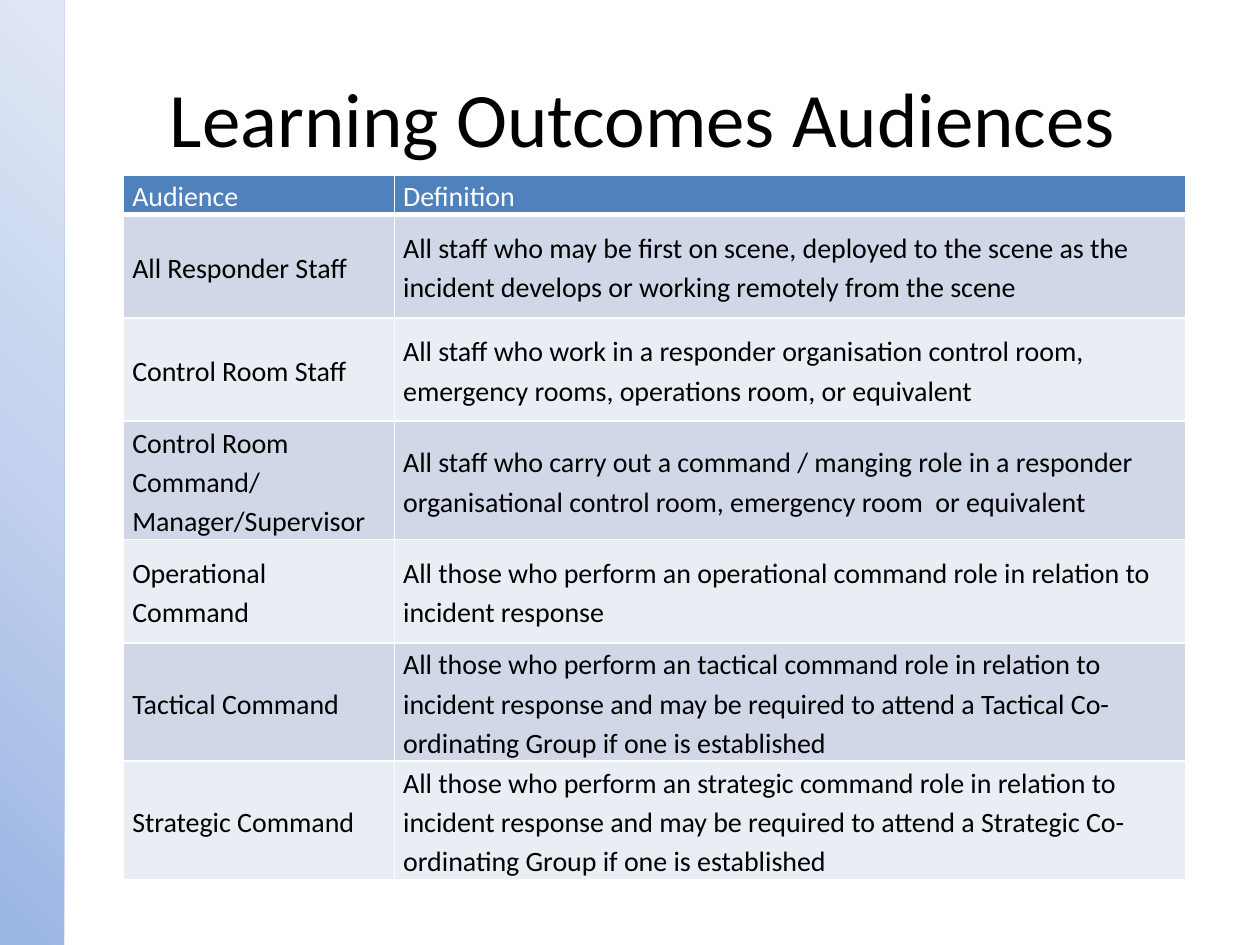
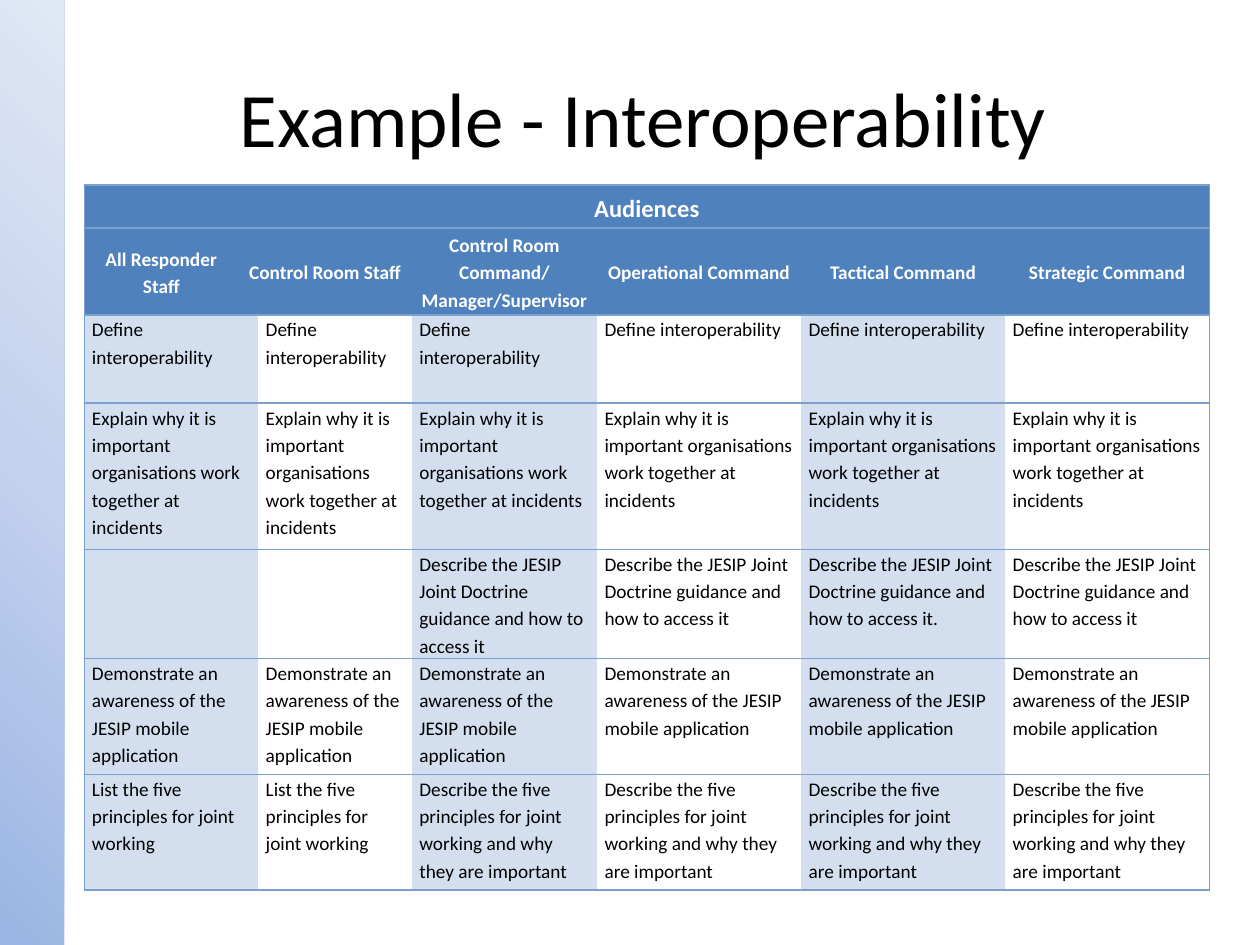
"""Build two slides on learning outcomes and their audiences."""
import copy

import pptx
import pptx.dml.color
import pptx.enum.shapes
import pptx.enum.text
import pptx.oxml.ns
import pptx.util
from lxml import etree
from pptx.util import Inches

FONT = "Calibri"
BLACK, WHITE = "000000", "FFFFFF"
HEADER_BLUE, GRID_BLUE, COLUMN_BLUE = "4F81BD", "7BA0CD", "D3DFEE"
ROW_BANDS = ("D0D8E8", "E9EDF4")
SIDE_BAND_STOPS = ((0, "9AB5E4"), (0.5, "C2D1ED"), (1, "E1E8F5"))
PLAIN_TABLE_STYLE = "{2D5ABB26-0587-4C30-8999-92F81FD0307C}"
LEFT = pptx.enum.text.PP_ALIGN.LEFT
CENTER = pptx.enum.text.PP_ALIGN.CENTER
TOP = pptx.enum.text.MSO_ANCHOR.TOP
MIDDLE = pptx.enum.text.MSO_ANCHOR.MIDDLE

AUDIENCES = (
    ("Audience", "Definition"),
    ("All Responder Staff",
     "All staff who may be first on scene, deployed to the scene as the incident "
     "develops or working remotely from the scene"),
    ("Control Room Staff",
     "All staff who work in a responder organisation control room, emergency rooms, "
     "operations room, or equivalent"),
    ("Control Room Command/ Manager/Supervisor",
     "All staff who carry out a command / manging role in a responder organisational "
     "control room, emergency room  or equivalent"),
    ("Operational Command",
     "All those who perform an operational command role in relation to incident response"),
    ("Tactical Command",
     "All those who perform an tactical command role in relation to incident response and "
     "may be required to attend a Tactical Co-ordinating Group if one is established"),
    ("Strategic Command",
     "All those who perform an strategic command role in relation to incident response and "
     "may be required to attend a Strategic Co-ordinating Group if one is established"),
)

AUDIENCE_HEADINGS = (
    "All Responder Staff", "Control Room Staff",
    "Control Room Command/\nManager/Supervisor",
    "Operational Command", "Tactical Command", "Strategic Command",
)
DOCTRINE = "Describe the JESIP Joint Doctrine guidance and how to access it"
OUTCOMES = (
    ["Define interoperability"] * 6,
    ["Explain why it is important organisations work together at incidents"] * 6,
    ["", "", DOCTRINE, DOCTRINE, DOCTRINE + ".", DOCTRINE],
    ["Demonstrate an awareness of the JESIP mobile application"] * 6,
    ["List the five principles for joint working"] * 2
    + ["Describe the five principles for joint working and why they are important"] * 4,
)


def rgb(value):
    """Return the colour for a hex string."""
    return pptx.dml.color.RGBColor.from_string(value)


def format_paragraph(paragraph, size, color, bold=False, alignment=LEFT):
    """Set the font and alignment of a paragraph."""
    paragraph.alignment = alignment
    font = paragraph.font
    font.name, font.size, font.bold = FONT, pptx.util.Pt(size), bold
    font.color.rgb = rgb(color)


def add_side_band(slide):
    """Add the gradient band behind everything at the left edge."""
    band = slide.shapes.add_shape(
        pptx.enum.shapes.MSO_SHAPE.RECTANGLE, 0, 0, Inches(0.51), Inches(7.5))
    band.shadow.inherit = False
    band.line.fill.background()
    band.fill.gradient()
    band.fill.gradient_angle = 45
    stop_list = band._element.spPr.find(".//" + pptx.oxml.ns.qn("a:gsLst"))
    stop_list.append(copy.deepcopy(stop_list[0]))
    for stop, (position, color) in zip(band.fill.gradient_stops, SIDE_BAND_STOPS):
        stop.position = position
        stop.color.rgb = rgb(color)
    slide.shapes._spTree.insert(2, band._element)


def add_titled_slide(presentation, text):
    """Add a slide with the side band and a centred title."""
    slide = presentation.slides.add_slide(presentation.slide_layouts[5])
    add_side_band(slide)
    title = slide.shapes.title
    title.left, title.top = Inches(0.67), Inches(0.3)
    title.width, title.height = Inches(8.87), Inches(1.25)
    title.text_frame.text = text
    title.text_frame.vertical_anchor = MIDDLE
    format_paragraph(title.text_frame.paragraphs[0], 44, BLACK, alignment=CENTER)
    return slide


def add_plain_table(slide, left, top, widths, heights):
    """Add a table without built-in styling and return it."""
    frame = slide.shapes.add_table(
        len(heights), len(widths), Inches(left), Inches(top),
        Inches(sum(widths)), Inches(sum(heights)))
    table = frame.table
    table.first_row = table.horz_banding = False
    table._tbl.tblPr.find(pptx.oxml.ns.qn("a:tableStyleId")).text = PLAIN_TABLE_STYLE
    for column, width in zip(table.columns, widths):
        column.width = Inches(width)
    for row, height in zip(table.rows, heights):
        row.height = Inches(height)
    return table


def fill_cell(cell, color):
    """Fill a cell, or leave it clear when there is no colour."""
    if color:
        cell.fill.solid()
        cell.fill.fore_color.rgb = rgb(color)
    else:
        cell.fill.background()


def write_cell(cell, text, size, color, inset, anchor=TOP, space_after=0, **style):
    """Write formatted text into a cell."""
    cell.text = text
    cell.vertical_anchor = anchor
    cell.margin_left = cell.margin_right = Inches(inset)
    cell.margin_top = cell.margin_bottom = 0
    for paragraph in cell.text_frame.paragraphs:
        paragraph.line_spacing = 1.15
        paragraph.space_after = pptx.util.Pt(space_after)
        format_paragraph(paragraph, size, color, **style)


def set_borders(cell, color, **widths):
    """Draw the borders named L, R, T and B at widths in points."""
    properties = cell._tc.get_or_add_tcPr()
    sides = [side for side in "LRTB" if side in widths]
    for index, side in enumerate(sides):
        line = etree.Element(
            pptx.oxml.ns.qn("a:ln" + side), w=str(pptx.util.Pt(widths[side])))
        fill = etree.SubElement(line, pptx.oxml.ns.qn("a:solidFill"))
        etree.SubElement(fill, pptx.oxml.ns.qn("a:srgbClr"), val=color)
        properties.insert(index, line)


def add_audience_table(slide):
    """Add the table that defines each audience."""
    heights = (0.3, 0.82, 0.82, 0.94, 0.82, 0.94, 0.94)
    table = add_plain_table(slide, 0.98, 1.39, (2.15, 6.28), heights)
    for row, texts in enumerate(AUDIENCES):
        is_header = row == 0
        for column, text in enumerate(texts):
            cell = table.cell(row, column)
            write_cell(cell, text, 16, WHITE if is_header else BLACK, 0.07,
                       TOP if is_header else MIDDLE)
            fill_cell(cell, HEADER_BLUE if is_header else ROW_BANDS[(row - 1) % 2])
            set_borders(cell, WHITE, L=1, R=1, T=1, B=3 if is_header else 1)


def add_outcome_table(slide):
    """Add the table of learning outcomes for each audience."""
    widths = (1.22, 0.09, 1.22, 1.47, 1.62, 1.62, 1.62)
    heights = (0.34, 0.69, 0.7, 1.16, 0.69, 0.92, 0.92)
    table = add_plain_table(slide, 0.67, 1.47, widths, heights)
    last = len(widths) - 1
    table.cell(0, 0).merge(table.cell(0, last))
    table.cell(1, 1).merge(table.cell(1, 2))
    for row in range(2, len(heights)):
        table.cell(row, 0).merge(table.cell(row, 1))

    heading = dict(color=WHITE, inset=0.06, anchor=MIDDLE, bold=True, alignment=CENTER)
    write_cell(table.cell(0, 0), "Audiences", 14, **heading)
    for column, text in zip((0, 1, 3, 4, 5, 6), AUDIENCE_HEADINGS):
        write_cell(table.cell(1, column), text, 11, **heading)
    for row, texts in enumerate(OUTCOMES, start=2):
        for column, text in zip((0, 2, 3, 4, 5, 6), texts):
            write_cell(table.cell(row, column), text, 11, BLACK, 0.06, space_after=10)

    for row in range(len(heights)):
        for column in range(len(widths)):
            cell = table.cell(row, column)
            shade = COLUMN_BLUE if column in (0, 1, 3, 5) else None
            fill_cell(cell, HEADER_BLUE if row < 2 else shade)
            borders = {"T": 1, "B": 1}
            if column == 0:
                borders["L"] = 1
            if column == last or column + cell.span_width > last:
                borders["R"] = 1
            set_borders(cell, GRID_BLUE, **borders)


def main():
    """Build and save the presentation."""
    presentation = pptx.Presentation()
    presentation.slide_width, presentation.slide_height = Inches(10), Inches(7.5)
    add_audience_table(add_titled_slide(presentation, "Learning Outcomes Audiences"))
    add_outcome_table(add_titled_slide(presentation, "Example - Interoperability"))
    presentation.save("out.pptx")


if __name__ == "__main__":
    main()
